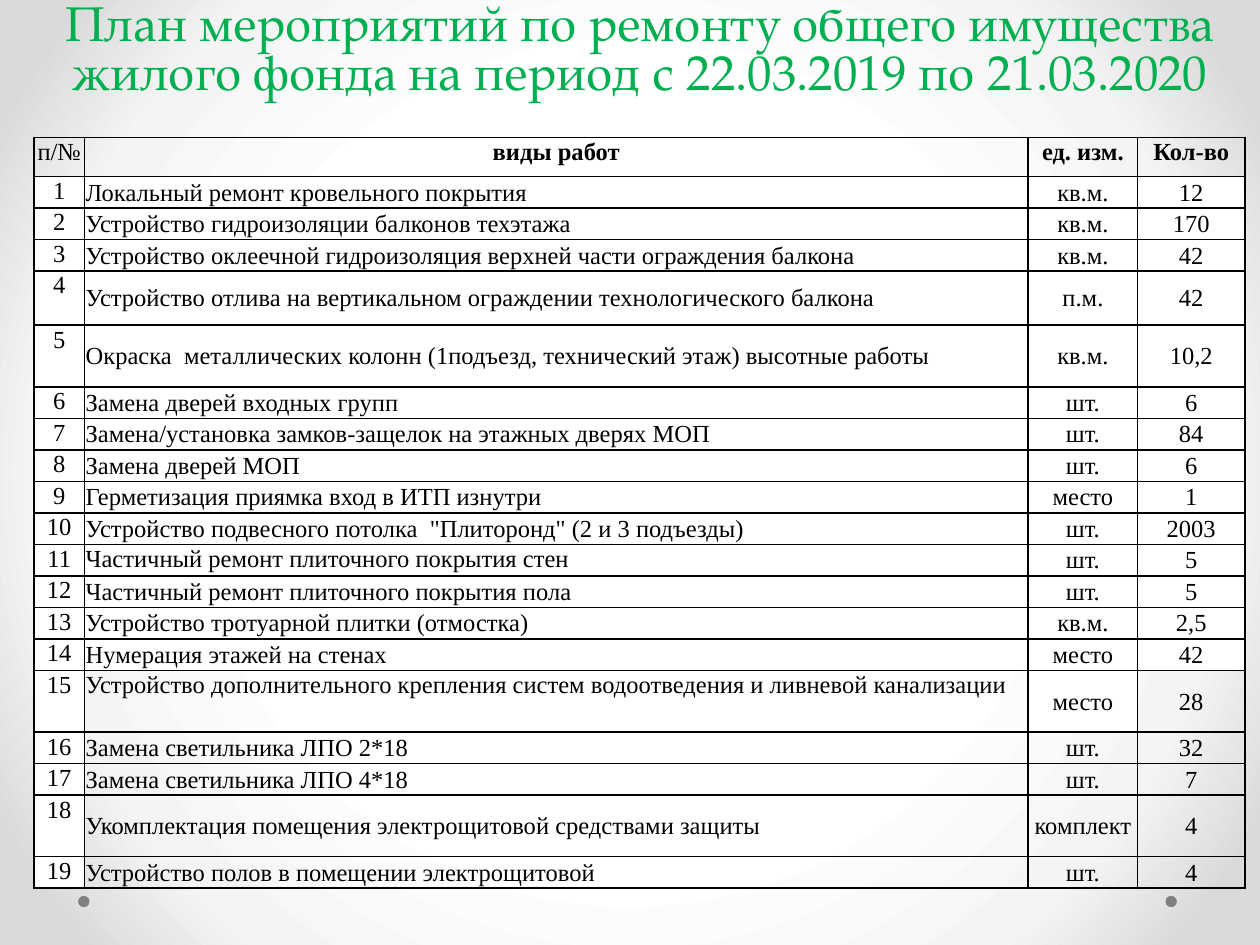
from dataclasses import dataclass

from lxml.etree import SubElement
from pptx import Presentation
from pptx.dml.color import RGBColor
from pptx.enum.shapes import MSO_SHAPE as Preset
from pptx.enum.text import MSO_ANCHOR as Anchor, PP_ALIGN as Align
from pptx.oxml import parse_xml
from pptx.oxml.ns import nsdecls, qn
from pptx.slide import Slide
from pptx.table import Table, _Cell as Cell
from pptx.util import Inches, Pt

COLORS = {
    "title": "00B050",
    "text": "000000",
    "border": "000000",
    "cell": "FFFFFF",
    "dot": "808080",
}
BACKGROUND_STOPS = {50: "FFFFFF", 76: "F4F4F4", 92: "DADADA"}
TITLE_FONT, TABLE_FONT = "TeX Gyre Pagella", "Times New Roman"

TITLE = ("План мероприятий по ремонту общего имущества "
         "жилого фонда на период с 22.03.2019 по 21.03.2020")
TITLE_WIDTH, TITLE_ROW_HEIGHT, TITLE_SIZE = 9.88, 0.26, 28
HEADINGS = ("п/№", "виды работ", "ед. изм.", "Кол-во")
COLUMN_WIDTHS = (0.4, 7.49, 0.87, 0.85)
HEADER_HEIGHT, ROW_HEIGHT, TALL_ROW = 0.31, 0.25, 0.49
NUMBER_COLUMN, NAME_COLUMN, UNIT_COLUMN, QUANTITY_COLUMN = range(4)


@dataclass(frozen=True)
class Work:
    name: str
    unit: str
    quantity: str
    height: float = ROW_HEIGHT
    name_anchor: Anchor = Anchor.MIDDLE
    clear_columns: tuple[int, ...] = ()


CLEAR = (NAME_COLUMN, UNIT_COLUMN, QUANTITY_COLUMN)
WORKS = [
    Work("Локальный ремонт кровельного покрытия", "кв.м.", "12"),
    Work("Устройство гидроизоляции балконов техэтажа", "кв.м.", "170"),
    Work("Устройство оклеечной гидроизоляция верхней части ограждения балкона",
         "кв.м.", "42"),
    Work("Устройство отлива на вертикальном ограждении технологического балкона",
         "п.м.", "42", 0.43),
    Work("Окраска  металлических колонн (1подъезд, технический этаж) высотные работы",
         "кв.м.", "10,2", TALL_ROW),
    Work("Замена дверей входных групп", "шт.", "6"),
    Work("Замена/установка замков-защелок на этажных дверях МОП", "шт.", "84"),
    Work("Замена дверей МОП", "шт.", "6"),
    Work("Герметизация приямка вход в ИТП изнутри", "место", "1"),
    Work('Устройство подвесного потолка  "Плиторонд" (2 и 3 подъезды)', "шт.", "2003"),
    Work("Частичный ремонт плиточного покрытия стен", "шт.", "5",
         name_anchor=Anchor.TOP),
    Work("Частичный ремонт плиточного покрытия пола", "шт.", "5"),
    Work("Устройство тротуарной плитки (отмостка)", "кв.м.", "2,5"),
    Work("Нумерация этажей на стенах", "место", "42"),
    Work("Устройство дополнительного крепления систем водоотведения и ливневой канализации",
         "место", "28", TALL_ROW, Anchor.TOP, (NAME_COLUMN, QUANTITY_COLUMN)),
    Work("Замена светильника ЛПО 2*18", "шт.", "32", clear_columns=CLEAR),
    Work("Замена светильника ЛПО 4*18", "шт.", "7", clear_columns=CLEAR),
    Work("Укомплектация помещения электрощитовой средствами защиты",
         "комплект", "4", TALL_ROW, clear_columns=CLEAR),
    Work("Устройство полов в помещении электрощитовой", "шт.", "4", clear_columns=CLEAR),
]


def color(name: str) -> RGBColor:
    return RGBColor.from_string(COLORS[name])


def add_run(paragraph, text: str, font_name: str, size: int, color_name: str,
            bold: bool = False) -> None:
    run = paragraph.add_run()
    run.text = text
    run.font.name = font_name
    run.font.size = Pt(size)
    run.font.bold = bold
    run.font.color.rgb = color(color_name)


def set_background(slide: Slide) -> None:
    """Fill the slide with a radial gradient, lightest at the centre."""
    slide.background.fill.gradient()
    old = next(slide.element.iter(qn("a:gradFill")))
    stops = "".join(f'<a:gs pos="{position * 1000}"><a:srgbClr val="{value}"/></a:gs>'
                    for position, value in BACKGROUND_STOPS.items())
    old.getparent().replace(old, parse_xml(
        f'<a:gradFill {nsdecls("a")} rotWithShape="1"><a:gsLst>{stops}</a:gsLst>'
        '<a:path path="circle"><a:fillToRect l="50000" t="50000" r="50000" b="50000"/>'
        '</a:path></a:gradFill>'))


def add_dot(slide: Slide, left: float) -> None:
    dot = slide.shapes.add_shape(Preset.OVAL, Inches(left), Inches(7.11),
                                 Inches(0.09), Inches(0.09))
    dot.shadow.inherit = False
    dot.fill.solid()
    dot.fill.fore_color.rgb = color("dot")
    dot.line.fill.background()


def add_plain_table(slide: Slide, left: float, top: float, widths: tuple[float, ...],
                    heights: list[float]) -> Table:
    """Add a table without banding, sized by its columns and rows in inches."""
    table = slide.shapes.add_table(
        len(heights), len(widths), Inches(left), Inches(top),
        Inches(sum(widths)), Inches(sum(heights))).table
    table.first_row = table.horz_banding = False
    for column, width in zip(table.columns, widths):
        column.width = Inches(width)
    for row, height in zip(table.rows, heights):
        row.height = Inches(height)
    return table


def remove_borders(cell: Cell) -> None:
    properties = cell._tc.get_or_add_tcPr()
    for index, side in enumerate("LRTB"):
        line = SubElement(properties, qn(f"a:ln{side}"))
        SubElement(line, qn("a:noFill"))
        properties.insert(index, line)


def add_title_table(slide: Slide) -> None:
    table = add_plain_table(slide, 0.14, 0.05, (TITLE_WIDTH,), [TITLE_ROW_HEIGHT] * 2)
    for cell in table.iter_cells():
        cell.fill.background()
        cell.margin_left = cell.margin_right = Inches(0.07)
        cell.margin_top = cell.margin_bottom = 0
        cell.vertical_anchor = Anchor.MIDDLE
        remove_borders(cell)
    paragraph = table.cell(0, 0).text_frame.paragraphs[0]
    paragraph.alignment = Align.CENTER
    paragraph.line_spacing = Pt(TITLE_SIZE)
    add_run(paragraph, TITLE, TITLE_FONT, TITLE_SIZE, "title")


def add_borders(cell: Cell) -> None:
    properties = cell._tc.get_or_add_tcPr()
    for index, side in enumerate("LRTB"):
        line = SubElement(properties, qn(f"a:ln{side}"), w=str(Pt(1)))
        fill = SubElement(line, qn("a:solidFill"))
        SubElement(fill, qn("a:srgbClr"), val=COLORS["border"])
        properties.insert(index, line)


def fill_cell(cell: Cell, text: str, align: Align, anchor: Anchor,
              filled: bool, bold: bool = False) -> None:
    cell.margin_left = cell.margin_right = cell.margin_top = Inches(0.01)
    cell.margin_bottom = 0
    cell.vertical_anchor = anchor
    if filled:
        cell.fill.solid()
        cell.fill.fore_color.rgb = color("cell")
    else:
        cell.fill.background()
    add_borders(cell)
    paragraph = cell.text_frame.paragraphs[0]
    paragraph.alignment = align
    add_run(paragraph, text, TABLE_FONT, 14, "text", bold)


def fill_work_row(table: Table, number: int, work: Work) -> None:
    texts = (str(number), work.name, work.unit, work.quantity)
    anchors = (Anchor.TOP, work.name_anchor, Anchor.MIDDLE, Anchor.MIDDLE)
    for column, (text, anchor) in enumerate(zip(texts, anchors)):
        align = Align.LEFT if column == NAME_COLUMN else Align.CENTER
        fill_cell(table.cell(number, column), text, align, anchor,
                  filled=column not in work.clear_columns)


def add_works_table(slide: Slide) -> None:
    heights = [HEADER_HEIGHT] + [work.height for work in WORKS]
    table = add_plain_table(slide, 0.27, 1.09, COLUMN_WIDTHS, heights)
    for column, heading in enumerate(HEADINGS):
        fill_cell(table.cell(0, column), heading, Align.CENTER, Anchor.TOP,
                  filled=False, bold=column != NUMBER_COLUMN)
    for number, work in enumerate(WORKS, start=1):
        fill_work_row(table, number, work)


def main() -> None:
    presentation = Presentation()
    presentation.slide_width, presentation.slide_height = Inches(10), Inches(7.5)
    slide = presentation.slides.add_slide(
        presentation.slide_layouts.get_by_name("Blank"))
    set_background(slide)
    for left in (9.25, 0.62):
        add_dot(slide, left)
    add_title_table(slide)
    add_works_table(slide)
    presentation.save("out.pptx")


if __name__ == "__main__":
    main()
